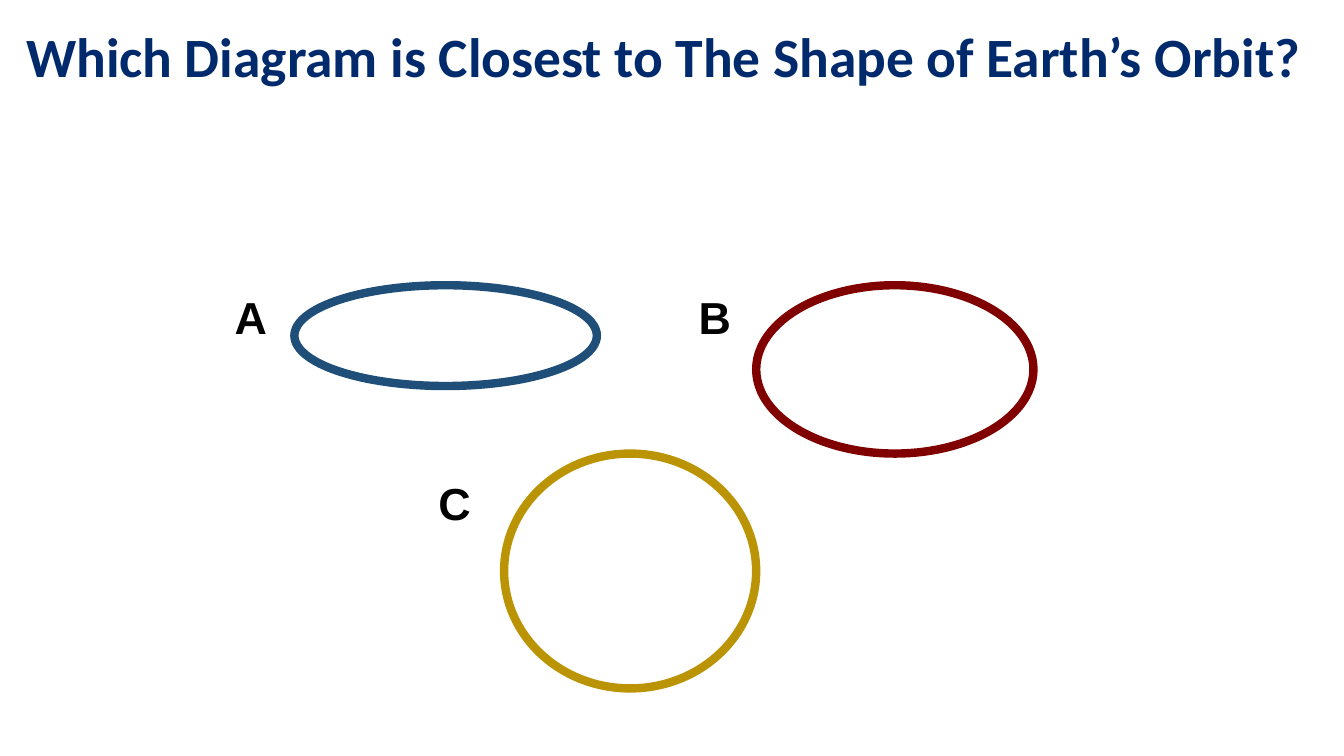
"""Builds a quiz slide about the shape of Earth's orbit."""
from pptx import Presentation
from pptx.dml.color import RGBColor
from pptx.enum.shapes import MSO_SHAPE
from pptx.enum.text import MSO_ANCHOR
from pptx.util import Inches, Pt

COLOURS = {
    "title": "002A6C",
    "label": "000000",
    "blue": "1F4E79",
    "red": "800000",
    "gold": "BB9405",
}
TITLE_FORMAT = {"name": "Calibri", "size": Pt(39.6), "bold": True}
LABEL_FORMAT = {"name": "Arial", "size": Pt(32), "bold": True}
LABEL_SIZE = (0.53, 0.64)
ORBITS = [
    ("A", "blue", (2.92, 2.83, 3, 1), (-0.69, 0)),
    ("B", "red", (7.5, 2.83, 2.75, 1.67), (-0.67, 0)),
    ("C", "gold", (5, 4.5, 2.5, 2.33), (-0.75, 0.17)),
]


def add_text(page, box, text, colour, font_format):
    """Place one line of formatted text in a box and return its frame."""
    frame = page.shapes.add_textbox(*map(Inches, box)).text_frame
    frame.word_wrap = True
    span = frame.paragraphs[0].add_run()
    span.text = text
    for name, value in font_format.items():
        setattr(span.font, name, value)
    span.font.color.rgb = RGBColor.from_string(COLOURS[colour])
    return frame


def add_title(page, box, text):
    """Place the question in a box, centred vertically."""
    frame = add_text(page, box, text, "title", TITLE_FORMAT)
    frame.vertical_anchor = MSO_ANCHOR.MIDDLE
    frame.paragraphs[0].line_spacing = 0.9


def add_orbit(page, box, letter, colour, label_offset):
    """Draw an orbit outline in a box with its letter offset from the corner."""
    orbit = page.shapes.add_shape(MSO_SHAPE.OVAL, *map(Inches, box))
    orbit.shadow.inherit = False
    orbit.fill.background()
    orbit.line.color.rgb = RGBColor.from_string(COLOURS[colour])
    orbit.line.width = Pt(6)
    left, top = box[0] + label_offset[0], box[1] + label_offset[1]
    add_text(page, (left, top, *LABEL_SIZE), letter, "label", LABEL_FORMAT)


def main():
    """Build and save the deck."""
    deck = Presentation()
    deck.slide_width, deck.slide_height = Inches(13.33), Inches(7.5)
    page = deck.slides.add_slide(deck.slide_layouts[6])
    add_title(page, (0.16, 0, 12.99, 1.18),
              "Which Diagram is Closest to The Shape of Earth’s Orbit?")
    for letter, colour, box, label_offset in ORBITS:
        add_orbit(page, box, letter, colour, label_offset)
    deck.save("out.pptx")


if __name__ == "__main__":
    main()
